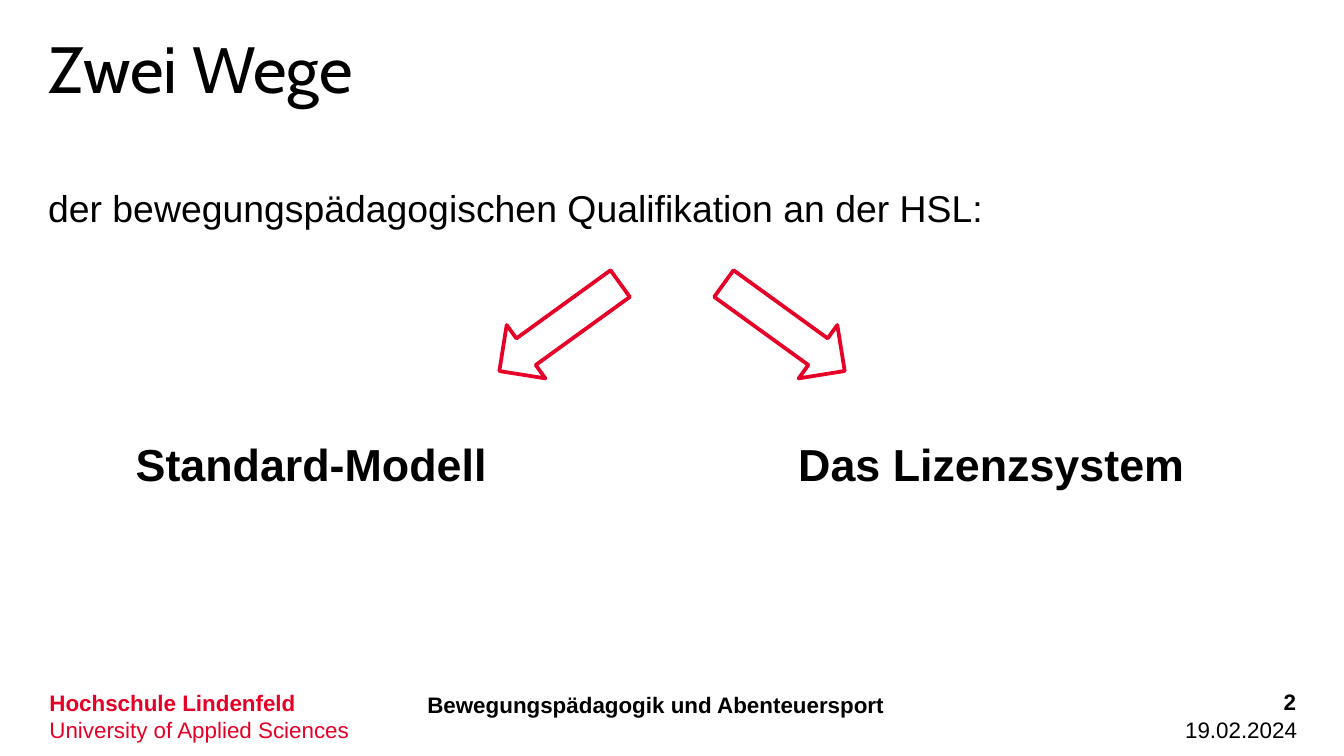
from pptx import Presentation
from pptx.util import Pt
from pptx.dml.color import RGBColor
from pptx.enum.shapes import MSO_SHAPE
from pptx.enum.text import MSO_ANCHOR, PP_ALIGN

RED = RGBColor(0xE6, 0x00, 0x28)
BLACK = RGBColor(0, 0, 0)
WHITE = RGBColor(255, 255, 255)
LEFT, MID, RIGHT = PP_ALIGN.LEFT, PP_ALIGN.CENTER, PP_ALIGN.RIGHT
INSET = 3.6

# box (left, top, width, height), top inset, anchor, alignment, colour,
# lines (text, font, size, bold, space before)
TEXTS = [
    ((18.7, 11.5, 681.8, 140.4), INSET, MSO_ANCHOR.TOP, LEFT, BLACK, [
        ("Zwei Wege", "Cabin", 35, False, 0),
        ("der bewegungspädagogischen Qualifikation an der HSL:", "Arial", 20, False, 42)]),
    ((33.1, 230.4, 267.1, 55.4), INSET, MSO_ANCHOR.TOP, MID, BLACK, [
        ("Standard-Modell", "Arial", 24, True, 3)]),
    ((420.5, 230.4, 229.7, 55.4), INSET, MSO_ANCHOR.TOP, LEFT, BLACK, [
        ("Das Lizenzsystem", "Arial", 24, True, 3)]),
    ((19.4, 365.8, 219.6, 36), INSET, MSO_ANCHOR.TOP, LEFT, RED, [
        ("Hochschule Lindenfeld", "Arial", 12, True, 0),
        ("University of Applied Sciences", "Arial", 12, False, 0)]),
    ((221.8, 370, 383, 25.2), 0, MSO_ANCHOR.TOP, LEFT, BLACK, [
        ("Bewegungspädagogik und Abenteuersport", "Arial", 12, True, 0)]),
    ((626.4, 376.6, 75.6, 28), INSET, MSO_ANCHOR.MIDDLE, RIGHT, BLACK, [
        ("19.02.2024", "Arial", 12, False, 0)]),
    ((616.3, 364.9, 85, 26.6), INSET, MSO_ANCHOR.TOP, RIGHT, BLACK, [
        ("2", "Arial", 12, True, 0)]),
]

# left edge, rotation
ARROWS = [(259.9, 144.1), (380.2, 35.9)]
ARROW_TOP, ARROW_WIDTH, ARROW_HEIGHT = 157.7, 79.9, 35.3


def add_text(slide, box, inset, anchor, align, color, lines):
    frame = slide.shapes.add_textbox(*map(Pt, box)).text_frame
    frame.word_wrap = True
    frame.margin_top = Pt(inset)
    frame.vertical_anchor = anchor
    frame.text = "\n".join(line[0] for line in lines)
    for para, (_, face, size, bold, gap) in zip(frame.paragraphs, lines):
        para.alignment = align
        para.space_before = Pt(gap)
        font = para.runs[0].font
        font.name, font.size, font.bold = face, Pt(size), bold
        font.color.rgb = color


def add_arrow(slide, left, turn):
    arrow = slide.shapes.add_shape(
        MSO_SHAPE.RIGHT_ARROW, Pt(left), Pt(ARROW_TOP), Pt(ARROW_WIDTH), Pt(ARROW_HEIGHT))
    arrow.rotation = turn
    arrow.shadow.inherit = False
    arrow.fill.solid()
    arrow.fill.fore_color.rgb = WHITE
    arrow.line.color.rgb = RED
    arrow.line.width = Pt(2)


def main():
    deck = Presentation()
    deck.slide_width, deck.slide_height = Pt(720), Pt(405)
    slide = deck.slides.add_slide(deck.slide_layouts[6])
    for text in TEXTS:
        add_text(slide, *text)
    for arrow in ARROWS:
        add_arrow(slide, *arrow)
    deck.save("out.pptx")


if __name__ == "__main__":
    main()
